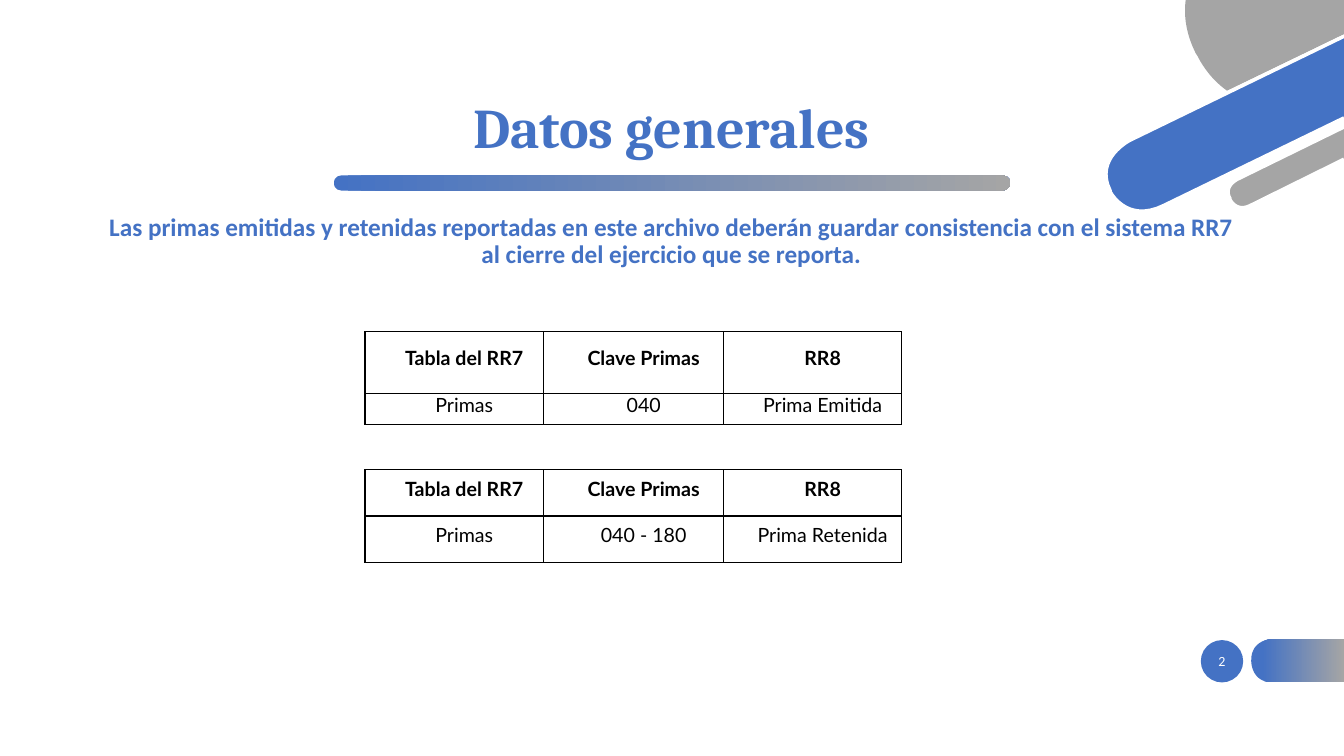
from lxml import etree
from pptx import Presentation
from pptx.dml.color import RGBColor
from pptx.enum.shapes import MSO_SHAPE
from pptx.enum.text import MSO_ANCHOR as ANCHOR, PP_ALIGN as ALIGN
from pptx.oxml.ns import qn
from pptx.util import Inches, Pt

BLUE, GRAY, WHITE, BLACK = "4472C4", "A5A5A5", "FFFFFF", "000000"
WIDTH, HEIGHT = 13.33, 7.5

TITLE = "Datos generales"
MESSAGE = ("Las primas emitidas y retenidas reportadas en este archivo deberán guardar "
           "consistencia con el sistema RR7 al cierre del ejercicio que se reporta.")
PAGE = "2"
HEADER = ["Tabla del RR7", "Clave Primas", "RR8"]
COLUMNS = [1.77, 1.79, 1.76]
# Top, row heights, data row
TABLES = [
    (3.29, [0.61, 0.31], ["Primas", "040", "Prima Emitida"]),
    (4.66, [0.46, 0.46], ["Primas", "040 - 180", "Prima Retenida"]),
]

# Outlines: pairs are corners, six numbers are a Bézier curve
DISC = [(13.33, 0.34), (13.33, 0), (11.76, 0),
        (11.74, 0.15, 11.76, 0.33, 11.86, 0.53), (11.88, 0.56),
        (11.88, 0.56, 11.97, 0.76, 12.17, 0.9)]
WIDE_BAND = [(13.33, 0.36), (11.21, 1.39),
             (11.21, 1.39, 10.85, 1.57, 11.01, 1.89), (11.01, 1.9),
             (11.01, 1.9, 11.17, 2.22, 11.54, 2.04), (13.33, 1.17)]
THIN_BAND = [(13.33, 1.26), (12.27, 1.78),
             (12.27, 1.78, 12.13, 1.85, 12.2, 1.97), (12.2, 1.98),
             (12.2, 1.98, 12.26, 2.11, 12.4, 2.04), (13.33, 1.58)]
PAGE_TAB = [(13.33, 6.77), (13.33, 6.34), (12.62, 6.34),
            (12.62, 6.34, 12.41, 6.34, 12.41, 6.55), (12.41, 6.56),
            (12.41, 6.56, 12.41, 6.77, 12.62, 6.77)]


def rgb(color):
    return RGBColor.from_string(color)


def write(tf, text, font="Calibri", size=18, color=BLUE, bold=False,
          spacing=None, after=None, anchor=None):
    tf.word_wrap = True
    if anchor is not None:
        tf.vertical_anchor = anchor
    p = tf.paragraphs[0]
    p.alignment = ALIGN.CENTER
    p.line_spacing = spacing
    p.space_before = Pt(0)
    p.space_after = after
    r = p.add_run()
    r.text = text
    r.font.name, r.font.size, r.font.bold = font, Pt(size), bold
    r.font.color.rgb = rgb(color)
    return p


def paint(sp, color, to=None, start=0, edge=None):
    """Fill with one colour, or blend from left to right when to is given."""
    sp.shadow.inherit = False
    if to:
        sp.fill.gradient()
        sp.fill.gradient_angle = 0
        for stop, shade, pos in zip(sp.fill.gradient_stops, (color, to), (start, 1)):
            stop.color.rgb = rgb(shade)
            stop.position = pos
    else:
        sp.fill.solid()
        sp.fill.fore_color.rgb = rgb(color)
    if edge:
        sp.line.color.rgb = rgb(edge)
        sp.line.width = Pt(2.5)
    else:
        sp.line.fill.background()


def outline(shapes, path, steps=16):
    """Build an open outline, so no edge is drawn along the slide border."""
    points = []
    for node in path:
        if len(node) == 2:
            points.append(node)
            continue
        corners = [points[-1], node[:2], node[2:4], node[4:]]
        for t in (i / steps for i in range(1, steps + 1)):
            weights = ((1 - t) ** 3, 3 * t * (1 - t) ** 2, 3 * t * t * (1 - t), t ** 3)
            points.append(tuple(sum(w * c[axis] for w, c in zip(weights, corners))
                                for axis in (0, 1)))
    points = [(Inches(x), Inches(y)) for x, y in points]
    builder = shapes.build_freeform(*points[0])
    builder.add_line_segments(points[1:], close=False)
    return builder.convert_to_shape()


def add_borders(cell):
    tc_pr = cell._tc.get_or_add_tcPr()
    for i, side in enumerate(("lnL", "lnR", "lnT", "lnB")):
        ln = etree.Element(qn(f"a:{side}"), w=str(Pt(1)))
        fill = etree.SubElement(ln, qn("a:solidFill"))
        etree.SubElement(fill, qn("a:srgbClr"), val=BLACK)
        tc_pr.insert(i, ln)


def add_premium_table(shapes, top, heights, data):
    rows = [HEADER, data]
    frame = shapes.add_table(len(rows), len(COLUMNS), Inches(3.62), Inches(top),
                             Inches(sum(COLUMNS)), Inches(sum(heights)))
    table = frame.table
    table.first_row = table.horz_banding = False
    for column, width in zip(table.columns, COLUMNS):
        column.width = Inches(width)
    for i, (row, height) in enumerate(zip(rows, heights)):
        table.rows[i].height = Inches(height)
        for j, text in enumerate(row):
            cell = table.cell(i, j)
            cell.fill.background()
            cell.vertical_anchor = ANCHOR.MIDDLE
            cell.margin_left = cell.margin_right = Inches(0.07)
            cell.margin_top = cell.margin_bottom = 0
            p = write(cell.text_frame, text, font="Lato", size=14, color=BLACK,
                      bold=i == 0, spacing=Pt(10.8), after=Pt(6))
            p._p.get_or_add_pPr().set("marL", str(Inches(0.2)))
            add_borders(cell)


def main():
    prs = Presentation()
    prs.slide_width, prs.slide_height = Inches(WIDTH), Inches(HEIGHT)
    s = prs.slides.add_slide(prs.slide_layouts[5])
    shapes = s.shapes

    # Corner decoration
    paint(outline(shapes, DISC), GRAY)
    paint(outline(shapes, THIN_BAND), GRAY, edge=WHITE)
    paint(outline(shapes, WIDE_BAND), BLUE, edge=WHITE)

    # Bar under the title
    bar = shapes.add_shape(MSO_SHAPE.ROUNDED_RECTANGLE, Inches(3.31), Inches(1.74),
                           Inches(6.71), Inches(0.15))
    bar.adjustments[0] = 0.5
    paint(bar, BLUE, to=GRAY)

    # Page number
    paint(outline(shapes, PAGE_TAB), BLUE, to=GRAY, start=0.12)
    badge = shapes.add_shape(MSO_SHAPE.OVAL, Inches(11.91), Inches(6.35),
                             Inches(0.42), Inches(0.42))
    paint(badge, BLUE)
    tf = badge.text_frame
    tf.margin_left = tf.margin_right = tf.margin_top = tf.margin_bottom = 0
    write(tf, PAGE, size=10, color=WHITE, anchor=ANCHOR.MIDDLE)

    # Title and message
    title = shapes.title
    title.left, title.top = Inches(0.91), Inches(0.9)
    title.width, title.height = Inches(11.5), Inches(0.74)
    write(title.text_frame, TITLE, font="Cambria", size=40, bold=True,
          spacing=0.9, anchor=ANCHOR.BOTTOM)
    message = shapes.add_textbox(Inches(0.91), Inches(2.08), Inches(11.5), Inches(0.77))
    write(message.text_frame, MESSAGE, bold=True, spacing=0.9)

    # Tables
    for top, heights, data in TABLES:
        add_premium_table(shapes, top, heights, data)

    prs.save("out.pptx")


if __name__ == "__main__":
    main()
